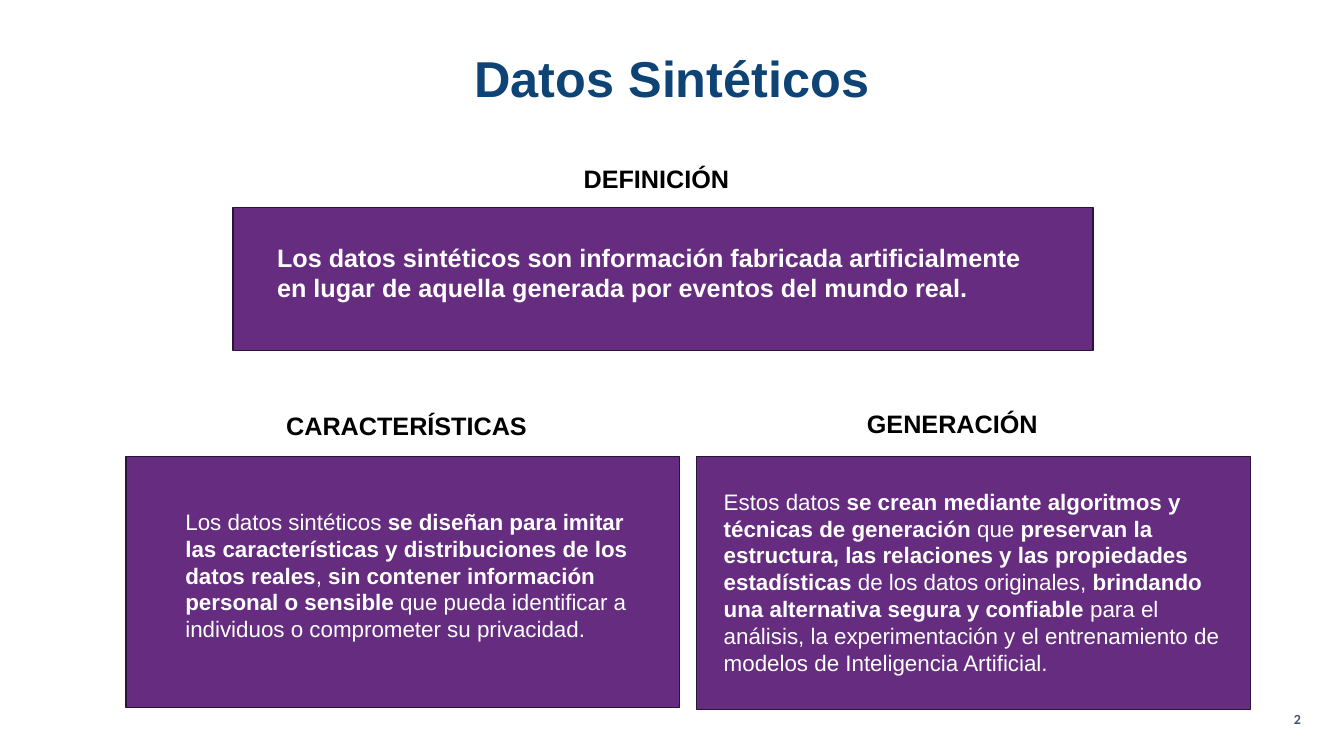
from pptx import Presentation
from pptx.dml.color import RGBColor
from pptx.enum.shapes import MSO_SHAPE
from pptx.enum.text import MSO_ANCHOR, MSO_AUTO_SIZE, PP_ALIGN
from pptx.util import Pt

PX = 9144
WIDE, HIGH = 1333, 750


def tint(code):
    """Turn a hex string into a colour."""
    return RGBColor.from_string(code)


class Deck:
    """Hold the style and the current slide."""

    fill, edge = "652C80", "2C1338"
    white, black, navy, slate = "FFFFFF", "000000", "0D4375", "44546A"

    def __init__(self):
        """Start a deck with one blank slide."""
        self.show = Presentation()
        self.show.slide_width = WIDE * PX
        self.show.slide_height = HIGH * PX
        self.slide = self.show.slides.add_slide(self.show.slide_layouts[6])

    def panel(self, *box):
        """Draw a purple panel."""
        shape = self.slide.shapes.add_shape(MSO_SHAPE.RECTANGLE, *(n * PX for n in box))
        shape.shadow.inherit = False
        shape.fill.solid()
        shape.fill.fore_color.rgb = tint(self.fill)
        shape.line.color.rgb = tint(self.edge)
        shape.line.width = Pt(1)

    def text(self, box, parts, size, color, face="Arial", align=PP_ALIGN.LEFT):
        """Write one paragraph whose odd parts are bold."""
        frame = self.slide.shapes.add_textbox(*(n * PX for n in box)).text_frame
        frame.word_wrap = True
        frame.auto_size = MSO_AUTO_SIZE.SHAPE_TO_FIT_TEXT
        para = frame.paragraphs[0]
        para.alignment = align
        for i, part in enumerate(parts):
            if part:
                run = para.add_run()
                run.text = part
                run.font.name = face
                run.font.size = Pt(size)
                run.font.bold = i % 2 == 1
                run.font.color.rgb = tint(color)
        return frame

    def head(self, left, top, label, width=484):
        """Write the heading of a panel."""
        self.text((left, top, width, 40), ["", label], 18, self.black)

    def title(self, label):
        """Write the slide title."""
        frame = self.text((0, 45, WIDE, 72), ["", label], 36, self.navy,
                          align=PP_ALIGN.CENTER)
        frame.auto_size = MSO_AUTO_SIZE.NONE
        frame.vertical_anchor = MSO_ANCHOR.MIDDLE
        frame.paragraphs[0].line_spacing = 0.9

    def page(self, label):
        """Write the page number."""
        frame = self.text((1251, 700, 49, 27), ["", label], 10, self.slate,
                          "Calibri", PP_ALIGN.RIGHT)
        frame.vertical_anchor = MSO_ANCHOR.MIDDLE


def main():
    """Build and save the slide."""
    deck = Deck()
    deck.page("2")
    deck.panel(691, 453, 549, 251)
    deck.panel(125, 453, 549, 249)
    deck.panel(231, 206, 853, 142)
    deck.title("Datos Sintéticos")

    deck.head(569, 157, "DEFINICIÓN")
    deck.text((265, 235, 783, 71), [
        "",
        "Los datos sintéticos son información fabricada artificialmente "
        "en lugar de aquella generada por eventos del mundo real.",
    ], 18, deck.white)

    deck.head(274, 402, "CARACTERÍSTICAS")
    deck.text((174, 499, 484, 145), [
        "Los datos sintéticos ",
        "se diseñan para imitar las características y distribuciones "
        "de los datos reales",
        ", ",
        "sin contener información personal o sensible",
        " que pueda identificar a individuos o comprometer su privacidad.",
    ], 16, deck.white)

    deck.head(850, 400, "GENERACIÓN", 483)
    deck.text((708, 479, 516, 199), [
        "Estos datos ",
        "se crean mediante algoritmos y técnicas de generación",
        " que ",
        "preservan la estructura, las relaciones y las propiedades estadísticas",
        " de los datos originales, ",
        "brindando una alternativa segura y confiable",
        " para el análisis, la experimentación y el entrenamiento de modelos "
        "de Inteligencia Artificial.",
    ], 16, deck.white)

    deck.show.save("out.pptx")


if __name__ == "__main__":
    main()
